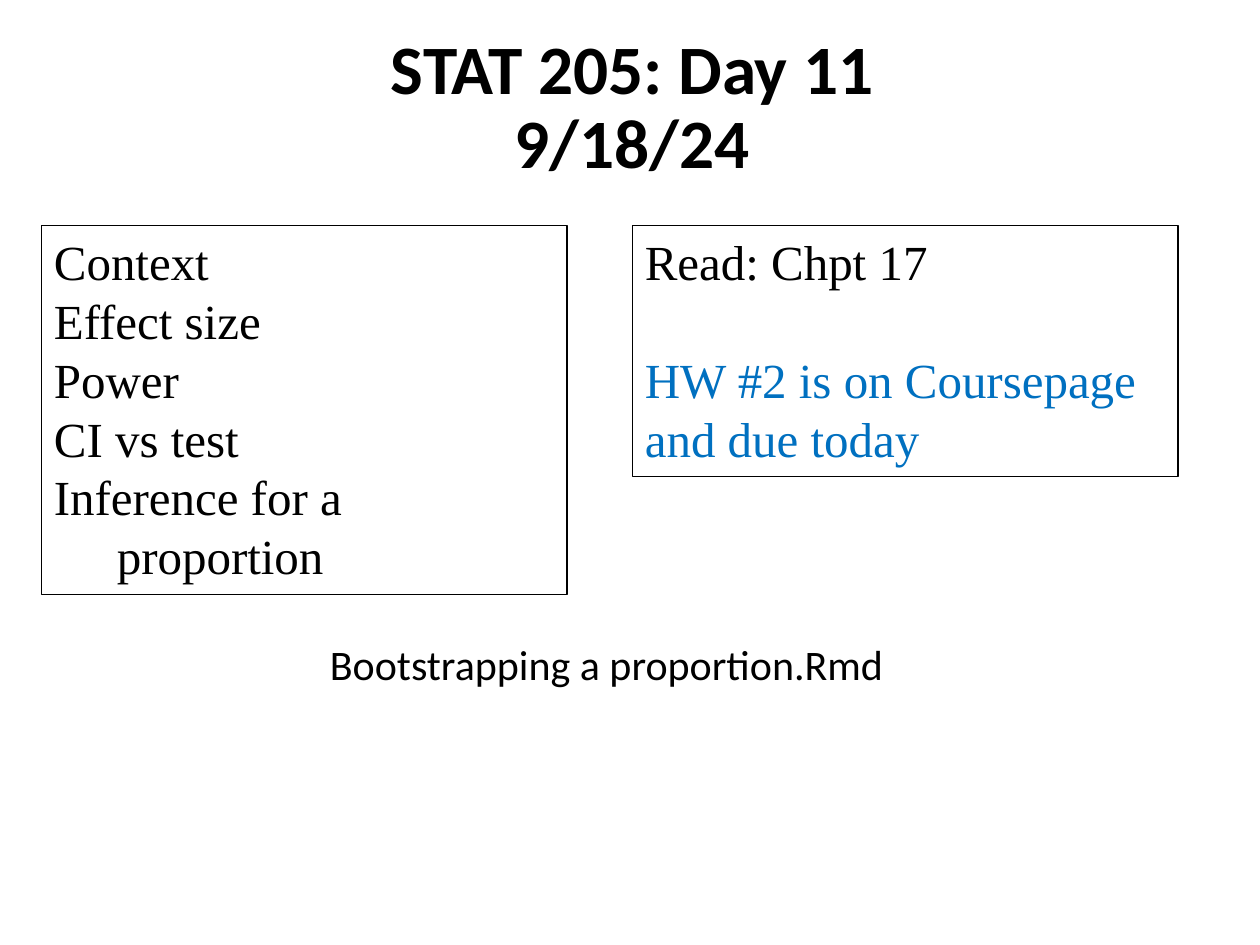
import pptx
import pptx.util
import pptx.dml.color
import pptx.enum.text
import pptx.enum.shapes

Inches = pptx.util.Inches
Pt = pptx.util.Pt
BLACK = pptx.dml.color.RGBColor(0, 0, 0)
BLUE = pptx.dml.color.RGBColor(0x00, 0x70, 0xC0)
LEFT = pptx.enum.text.PP_ALIGN.LEFT
CENTER = pptx.enum.text.PP_ALIGN.CENTER
TOP = pptx.enum.text.MSO_ANCHOR.TOP
MIDDLE = pptx.enum.text.MSO_ANCHOR.MIDDLE
NONE = pptx.enum.text.MSO_AUTO_SIZE.NONE
RECT = pptx.enum.shapes.MSO_SHAPE.RECTANGLE
LINE = Pt(33.6)


def style(para, font, size, color, align=LEFT):
    para.alignment = align
    for run in para.runs:
        run.font.name = font
        run.font.size = Pt(size)
        run.font.color.rgb = color


deck = pptx.Presentation()
deck.slide_width = Inches(10)
deck.slide_height = Inches(7.5)
slide = deck.slides.add_slide(deck.slide_layouts[5])

title = slide.shapes.title
title.left, title.top = Inches(0.77), Inches(0.24)
title.width, title.height = Inches(8.5), Inches(1.25)
frame = title.text_frame
frame.text = "STAT 205: Day 11\v9/18/24"
frame.auto_size = NONE
frame.vertical_anchor = MIDDLE
para = frame.paragraphs[0]
para.line_spacing = 0.9
style(para, "Calibri", 39.6, BLACK, CENTER)
for run in para.runs:
    run.font.bold = True

tasks = ["Read: Chpt 17", "HW #2 is on Coursepage and due today"]
topics = ["Context", "Effect size", "Power", "CI vs test", "Inference for a proportion"]
boxes = []
for left, width, height, lines in [(5.02, 4.33, 1.99, tasks), (0.33, 4.17, 2.93, topics)]:
    box = slide.shapes.add_shape(RECT, Inches(left), Inches(1.79), Inches(width), Inches(height))
    box.shadow.inherit = False
    box.fill.background()
    box.line.color.rgb = BLACK
    box.line.width = Pt(0.75)
    frame = box.text_frame
    frame.word_wrap = True
    frame.vertical_anchor = TOP
    frame.text = "\n".join(lines)
    for para in frame.paragraphs:
        para.line_spacing = LINE
        style(para, "Times New Roman", 28, BLACK)
    boxes.append(frame)

due = boxes[0].paragraphs[1]
due.space_before = LINE
due.runs[0].font.color.rgb = BLUE

for para in boxes[1].paragraphs:
    props = para._p.get_or_add_pPr()
    props.set("marL", str(Inches(0.5)))
    props.set("indent", str(Inches(-0.5)))

note = slide.shapes.add_textbox(Inches(2.52), Inches(5.02), Inches(5), Inches(0.5))
note.text_frame.word_wrap = True
note.text_frame.text = "Bootstrapping a proportion.Rmd"
style(note.text_frame.paragraphs[0], "Calibri", 24, BLACK)

deck.save("out.pptx")
